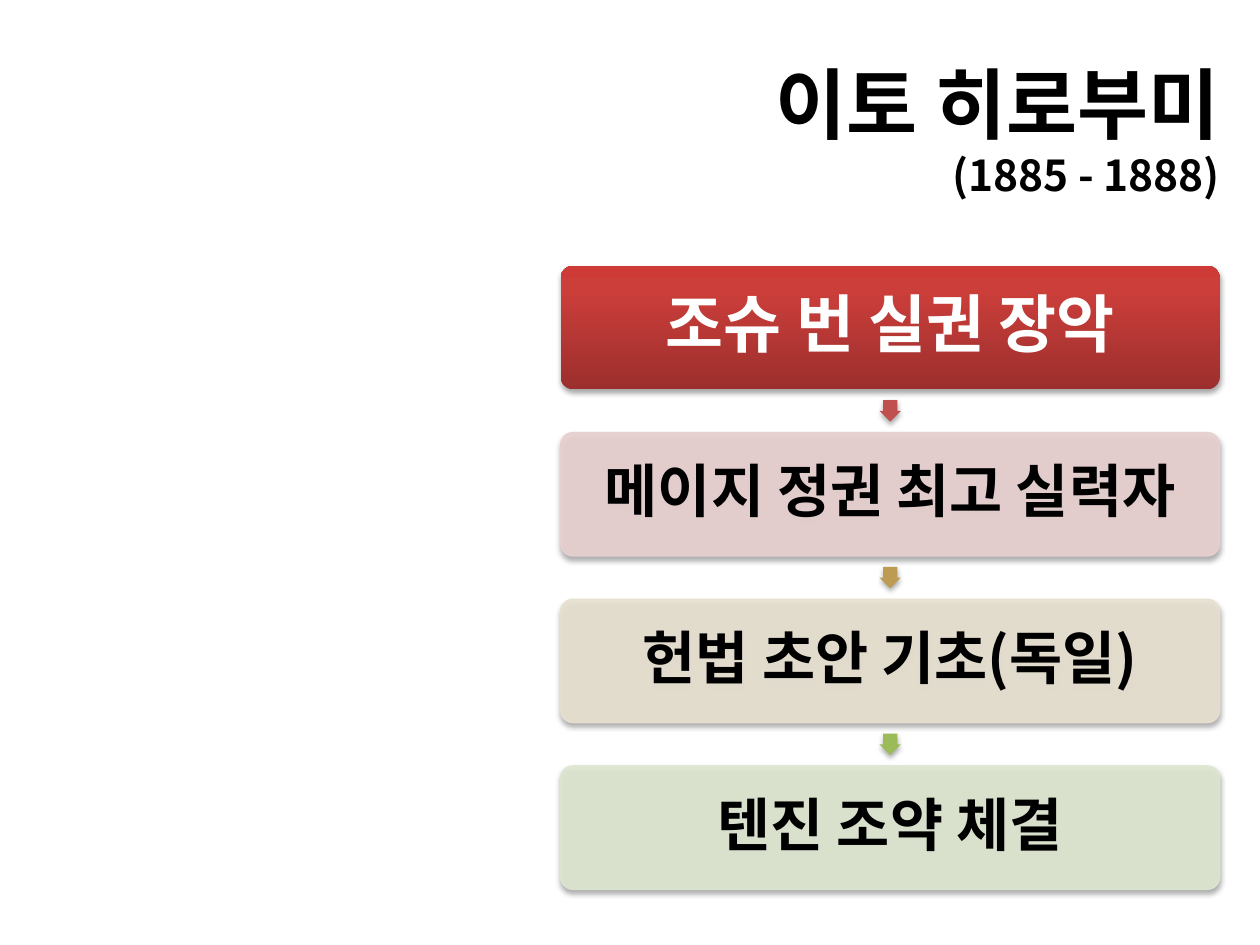
from dataclasses import dataclass
from lxml import etree
from pptx import Presentation
from pptx import util as u
from pptx.dml.color import RGBColor
from pptx.enum import shapes, text
from pptx.oxml.ns import qn


@dataclass(frozen=True)
class Theme:
    font: str = "Noto Sans CJK KR"
    ink: str = "000000"
    pale: str = "FFFFFF"
    reds: tuple = ((0, "9C2F2D"), (80, "CB3E3A"), (100, "CE3B37"))
    tints: tuple = ("E8D0D0", "E8E1D1", "DEE7D1")
    darts: tuple = ("C0504D", "BD9B53", "9BBB59")
    title: float = 44.1
    years: float = 24.3
    head: float = 36
    body: float = 33


def sub(node, tag, **attrs):
    return etree.SubElement(node, qn(tag), {k: str(v) for k, v in attrs.items()})


class Deck:
    def __init__(self, theme, wide, high):
        self.theme = theme
        self.prs = Presentation()
        self.prs.slide_width, self.prs.slide_height = u.Inches(wide), u.Inches(high)
        self.slide = self.prs.slides.add_slide(self.prs.slide_layouts[6])

    def place(self, left, top, wide, high):
        col, row = self.prs.slide_width / 100, self.prs.slide_height / 100
        return [round(n) for n in (left * col, top * row, wide * col, high * row)]

    def run(self, para, words, size, color):
        run = para.add_run()
        run.text = words
        font = run.font
        font.name, font.size, font.bold = self.theme.font, u.Pt(size), True
        font.color.rgb = RGBColor.from_string(color)
        sub(run._r.get_or_add_rPr(), "a:ea", typeface=self.theme.font)

    def title(self, area, name, years):
        frame = self.slide.shapes.add_textbox(*self.place(*area)).text_frame
        frame.word_wrap = True
        frame.vertical_anchor = text.MSO_ANCHOR.MIDDLE
        para = frame.paragraphs[0]
        para.alignment = text.PP_ALIGN.RIGHT
        self.run(para, name, self.theme.title, self.theme.ink)
        para.add_line_break()
        self.run(para, years, self.theme.years, self.theme.ink)

    def solid(self, fill, color, alpha=100):
        fill.solid()
        fill.fore_color.rgb = RGBColor.from_string(color)
        if alpha < 100:
            node = fill._xPr.find(qn("a:solidFill"))[0]
            sub(node, "a:alpha", val=alpha * 1000)

    def blend(self, fill, stops):
        fill.gradient()
        fill.gradient_angle = 90
        group = fill._xPr.find(qn("a:gradFill")).find(qn("a:gsLst"))
        for old in list(group):
            group.remove(old)
        for pos, color in stops:
            sub(sub(group, "a:gs", pos=pos * 1000), "a:srgbClr", val=color)

    def shape(self, kind, area, *adjust):
        shape = self.slide.shapes.add_shape(kind, *self.place(*area))
        for i, value in enumerate(adjust):
            shape.adjustments[i] = value
        shape.line.fill.background()
        shape.shadow.inherit = False
        glow = sub(shape._element.spPr.find(qn("a:effectLst")), "a:outerShdw",
                   blurRad=u.Pt(3.1), dist=u.Pt(1.8), dir=5400000, rotWithShape=0)
        sub(sub(glow, "a:srgbClr", val="000000"), "a:alpha", val=35000)
        return shape

    def card(self, area, words, tint=None):
        shape = self.shape(shapes.MSO_SHAPE.ROUNDED_RECTANGLE, area, 0.1)
        if tint:
            self.solid(shape.fill, tint, 90)
            self.solid(shape.line.fill, tint, 90)
            shape.line.width = u.Pt(0.75)
        else:
            self.blend(shape.fill, self.theme.reds)
        frame = shape.text_frame
        frame.word_wrap = True
        frame.vertical_anchor = text.MSO_ANCHOR.MIDDLE
        frame.margin_left = frame.margin_right = u.Inches(0.05)
        frame.margin_top = frame.margin_bottom = u.Inches(0.05)
        para = frame.paragraphs[0]
        para.alignment = text.PP_ALIGN.CENTER
        para.line_spacing = 0.9
        sub(sub(para._p.get_or_add_pPr(), "a:spcAft"), "a:spcPct", val=35000)
        size = self.theme.body if tint else self.theme.head
        self.run(para, words, size, self.theme.ink if tint else self.theme.pale)

    def arrow(self, area, color):
        shape = self.shape(shapes.MSO_SHAPE.RIGHT_ARROW, area, 0.67, 0.5)
        shape.rotation = 90
        self.solid(shape.fill, color)


def main():
    theme = Theme()
    deck = Deck(theme, 10, 7.5)
    deck.title((7.8, 5.2, 90, 16.67), "이토 히로부미", "(1885 - 1888)")
    left, top, wide, high, step = 44.5, 28.13, 52.3, 13.07, 17.64
    dart, tall = 1.7, 2.27
    steps = ("조슈 번 실권 장악", "메이지 정권 최고 실력자",
             "헌법 초안 기초(독일)", "텐진 조약 체결")
    for i, (words, tint) in enumerate(zip(steps, (None, *theme.tints))):
        y = top + i * step
        deck.card((left, y, wide, high), words, tint)
        if i < len(theme.darts):
            gap = y + (high + step - tall) / 2
            deck.arrow((left + (wide - dart) / 2, gap, dart, tall), theme.darts[i])
    deck.prs.save("out.pptx")


if __name__ == "__main__":
    main()
